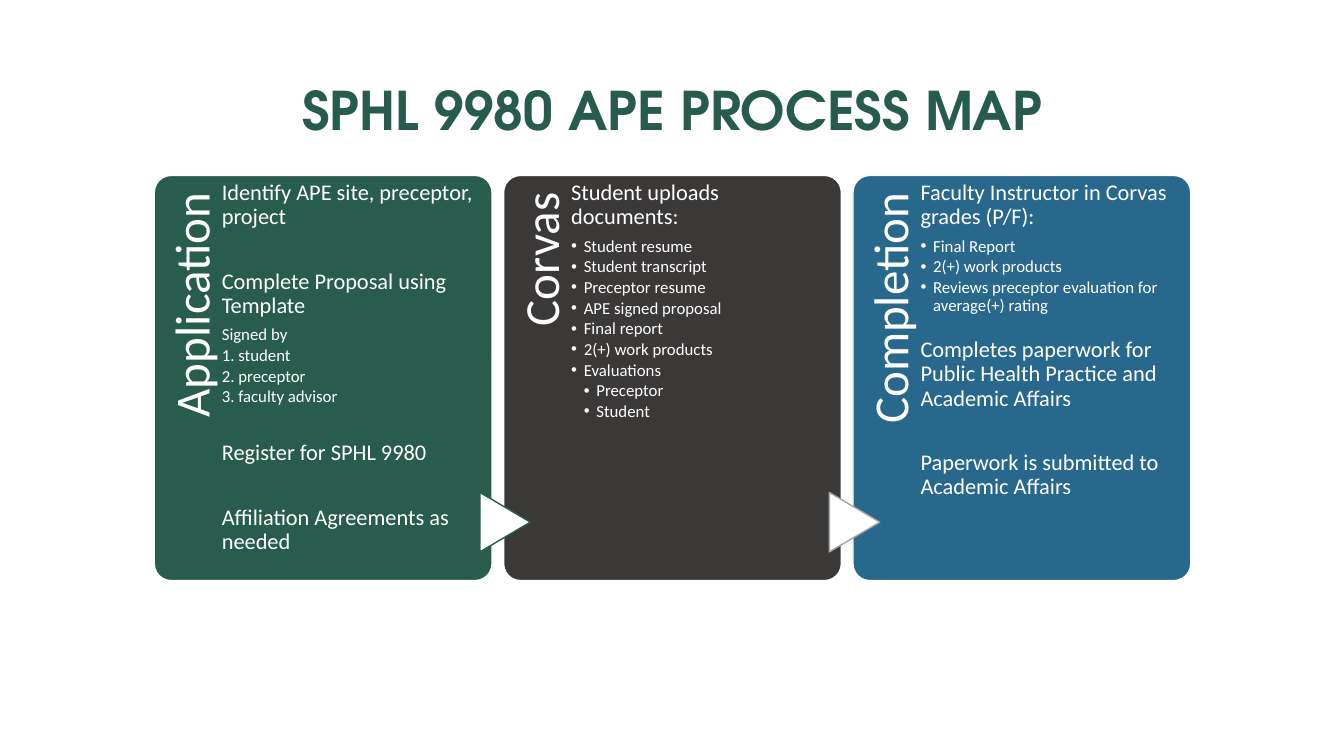
from lxml import etree
from pptx import Presentation
from pptx import util as u
from pptx.dml.color import RGBColor
from pptx.enum import shapes, text
from pptx.oxml.ns import qn

COLORS = {
    "white": "FFFFFF",
    "title": "265B4D",
    "green": "285C4D",
    "charcoal": "3B3838",
    "blue": "28688C",
    "grey": "A5A5A5",
}
CARD_LEFT, CARD_TOP, CARD_WIDTH, CARD_HEIGHT = 1.53, 1.74, 3.35, 4.02
CARD_STEP = 3.465
LABEL_LENGTH, LABEL_DEPTH = 3.3, 0.67
ARROW_WIDTH, ARROW_HEIGHT = 0.59, 0.5
INDENT = 0.125
SIZES = (16, 12, 12)
SPACE_AFTER = (5.5, 1.8, 1.8)
WIDE_GAP, NARROW_GAP = 23.3, 14.8

STAGES = [
    ("Application", "green", False, [
        (0, "Identify APE site, preceptor, project", 0),
        (0, "Complete Proposal using Template", WIDE_GAP),
        (1, "Signed by", 0),
        (1, "1. student", 0),
        (1, "2. preceptor", 0),
        (1, "3. faculty advisor", 0),
        (0, "Register for SPHL 9980", WIDE_GAP),
        (0, "Affiliation Agreements as needed", WIDE_GAP),
    ]),
    ("Corvas", "charcoal", True, [
        (0, "Student uploads documents:", 0),
        (1, "Student resume", 0),
        (1, "Student transcript", 0),
        (1, "Preceptor resume", 0),
        (1, "APE signed proposal", 0),
        (1, "Final report", 0),
        (1, "2(+) work products", 0),
        (1, "Evaluations", 0),
        (2, "Preceptor", 0),
        (2, "Student", 0),
    ]),
    ("Completion", "blue", True, [
        (0, "Faculty Instructor in Corvas grades (P/F):", 0),
        (1, "Final Report", 0),
        (1, "2(+) work products", 0),
        (1, "Reviews preceptor evaluation for average(+) rating", 0),
        (0, "Completes paperwork for Public Health Practice and Academic Affairs", NARROW_GAP),
        (0, "Paperwork is submitted to Academic Affairs", WIDE_GAP),
    ]),
]


def rgb(name):
    return RGBColor.from_string(COLORS[name])


def place(box, left, top, width, height):
    box.left, box.top = u.Inches(left), u.Inches(top)
    box.width, box.height = u.Inches(width), u.Inches(height)


def set_frame(box, left, top, right, bottom, anchor):
    frame = box.text_frame
    frame.word_wrap = True
    frame.auto_size = text.MSO_AUTO_SIZE.NONE
    frame.vertical_anchor = anchor
    frame.margin_left, frame.margin_top = u.Inches(left), u.Inches(top)
    frame.margin_right, frame.margin_bottom = u.Inches(right), u.Inches(bottom)
    return frame


def add_span(para, words, size, color, font="Calibri", bold=False):
    span = para.add_run()
    span.text = words
    span.font.size = u.Pt(size)
    span.font.name = font
    span.font.bold = bold
    span.font.color.rgb = rgb(color)


def set_spacing(para, before=0, after=0):
    para.line_spacing = 0.9
    para.space_before, para.space_after = u.Pt(before), u.Pt(after)


def set_bullet(para, level, bulleted):
    settings = para._p.get_or_add_pPr()
    settings.set("marL", str(u.Inches(INDENT * level)))
    settings.set("indent", str(-u.Inches(INDENT) if level else 0))
    if bulleted and level:
        etree.SubElement(settings, qn("a:buFont")).set("typeface", "Arial")
        etree.SubElement(settings, qn("a:buChar")).set("char", "•")
    else:
        etree.SubElement(settings, qn("a:buNone"))


def add_solid(page, kind, area, fill, line):
    shape = page.shapes.add_shape(kind, *(u.Inches(length) for length in area))
    shape.shadow.inherit = False
    shape.fill.solid()
    shape.fill.fore_color.rgb = rgb(fill)
    shape.line.color.rgb = rgb(line)
    shape.line.width = u.Pt(1)
    return shape


def add_card(page, left, color):
    area = (left, CARD_TOP, CARD_WIDTH, CARD_HEIGHT)
    card = add_solid(page, shapes.MSO_SHAPE.ROUNDED_RECTANGLE, area, color, "white")
    card.adjustments[0] = 0.05


def add_label(page, left, words):
    label_left = left + (LABEL_DEPTH - LABEL_LENGTH) / 2
    label_top = CARD_TOP + (LABEL_LENGTH - LABEL_DEPTH) / 2
    box = page.shapes.add_textbox(0, 0, 0, 0)
    place(box, label_left, label_top, LABEL_LENGTH, LABEL_DEPTH)
    box.rotation = 270
    frame = set_frame(box, 0, 0.13, 0.17, 0, text.MSO_ANCHOR.TOP)
    para = frame.paragraphs[0]
    para.alignment = text.PP_ALIGN.RIGHT
    set_spacing(para)
    add_span(para, words, 35, "white")


def fill_list(box, left, items, bulleted):
    place(box, left + LABEL_DEPTH, CARD_TOP, 2.49, CARD_HEIGHT)
    box.element.getparent().append(box.element)
    frame = set_frame(box, 0, 0.06, 0, 0, text.MSO_ANCHOR.TOP)
    for index, (level, words, gap) in enumerate(items):
        para = frame.add_paragraph() if index else frame.paragraphs[0]
        para.level = level
        para.alignment = text.PP_ALIGN.LEFT
        set_spacing(para, gap, SPACE_AFTER[level])
        set_bullet(para, level, bulleted)
        add_span(para, words, SIZES[level], "white")


def add_arrow(page, card_left, line):
    area = (card_left - 0.28, 4.93, ARROW_WIDTH, ARROW_HEIGHT)
    arrow = add_solid(page, shapes.MSO_SHAPE.FLOWCHART_EXTRACT, area, "white", line)
    arrow.rotation = 90


def fill_title(box, words):
    place(box, 0.92, 0.4, 11.5, 1.45)
    frame = set_frame(box, 0.1, 0.05, 0.1, 0.05, text.MSO_ANCHOR.MIDDLE)
    para = frame.paragraphs[0]
    para.alignment = text.PP_ALIGN.CENTER
    set_spacing(para)
    add_span(para, words, 38, "title", "TeX Gyre Adventor", True)


def main():
    deck = Presentation()
    deck.slide_width, deck.slide_height = u.Inches(13.33), u.Inches(7.5)
    page = deck.slides.add_slide(deck.slide_layouts.get_by_name("Comparison"))
    title, *bodies = page.placeholders
    fill_title(title, "SPHL 9980 APE PROCESS MAP")
    lefts = [CARD_LEFT + CARD_STEP * column for column in range(len(STAGES))]
    for left, body, (label, color, bulleted, items) in zip(lefts, bodies, STAGES):
        add_card(page, left, color)
        add_label(page, left, label)
        fill_list(body, left, items, bulleted)
    for left, line in zip(lefts[1:], ("green", "grey")):
        add_arrow(page, left, line)
    for body in bodies[len(STAGES):]:
        body.element.getparent().remove(body.element)
    deck.save("out.pptx")


if __name__ == "__main__":
    main()
